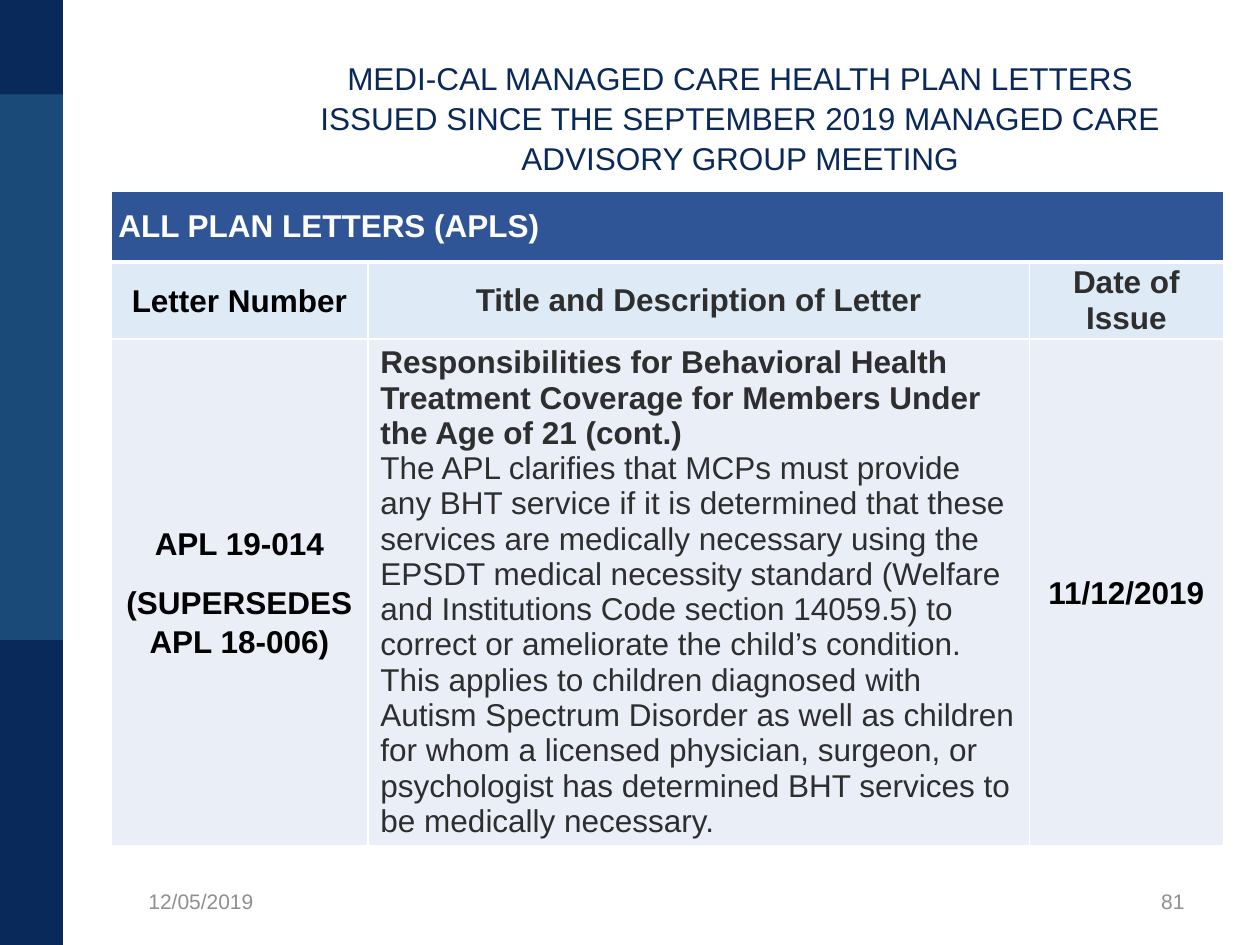
from lxml.etree import SubElement
from pptx import Presentation
from pptx.dml.color import RGBColor
from pptx.enum.shapes import MSO_SHAPE
from pptx.enum.text import MSO_ANCHOR, PP_ALIGN
from pptx.oxml.ns import qn
from pptx.util import Inches, Pt

NAVY, TEAL = "0A295B", "1A4A78"
WHITE, BLACK, CHARCOAL, GRAY = "FFFFFF", "000000", "2E2E2E", "8F8F8F"
BANNER, HEADER, BODY = "2F5597", "DEEBF7", "EAEFF7"
LEFT, CENTER, RIGHT = PP_ALIGN.LEFT, PP_ALIGN.CENTER, PP_ALIGN.RIGHT

DESCRIPTION = (
    "The APL clarifies that MCPs must provide any BHT service if it is determined "
    "that these services are medically necessary using the EPSDT medical necessity "
    "standard (Welfare and Institutions Code section 14059.5) to correct or "
    "ameliorate the child’s condition. This applies to children diagnosed with "
    "Autism Spectrum Disorder as well as children for whom a licensed physician, "
    "surgeon, or psychologist has determined BHT services to be medically necessary."
)


def color(value):
    return RGBColor.from_string(value)


def add_band(page, top, height, fill):
    band = page.shapes.add_shape(
        MSO_SHAPE.RECTANGLE, 0, Inches(top), Inches(0.5), Inches(height))
    band.shadow.inherit = False
    band.fill.solid()
    band.fill.fore_color.rgb = color(fill)
    band.line.fill.background()


def add_span(para, text, size, ink, bold=False):
    span = para.add_run()
    span.text = text
    span.font.name = "Arial"
    span.font.size = Pt(size)
    span.font.bold = bold
    span.font.color.rgb = color(ink)


def add_text(page, left, top, width, height, lines, size, ink, align, spacing=1.0):
    box = page.shapes.add_textbox(
        Inches(left), Inches(top), Inches(width), Inches(height))
    frame = box.text_frame
    frame.word_wrap = True
    frame.vertical_anchor = MSO_ANCHOR.MIDDLE
    para = frame.paragraphs[0]
    para.alignment = align
    para.line_spacing = spacing
    for index, line in enumerate(lines):
        if index:
            para.add_line_break()
        add_span(para, line, size, ink)


def set_borders(cell, **widths):
    properties = cell._tc.get_or_add_tcPr()
    for index, side in enumerate("LRTB"):
        line = SubElement(properties, qn(f"a:ln{side}"), w=str(Pt(widths.get(side, 1))))
        fill = SubElement(line, qn("a:solidFill"))
        SubElement(fill, qn("a:srgbClr"), val=WHITE)
        # Border lines come before the fill in the cell properties
        properties.insert(index, line)


def fill_cell(cell, fill, paragraphs, align=CENTER, spacing=1.0, gap=0, tight=True):
    """Each paragraph is a (text, colour, bold) triple."""
    cell.fill.solid()
    cell.fill.fore_color.rgb = color(fill)
    cell.vertical_anchor = MSO_ANCHOR.MIDDLE
    if tight:
        cell.margin_left = cell.margin_right = Inches(0.06)
        cell.margin_top = cell.margin_bottom = 0
    frame = cell.text_frame
    for index, (text, ink, bold) in enumerate(paragraphs):
        para = frame.add_paragraph() if index else frame.paragraphs[0]
        para.alignment = align
        para.line_spacing = spacing
        if index and gap:
            para.space_before = Pt(gap)
        add_span(para, text, 18, ink, bold)


def add_letters_table(page):
    widths, heights = (2.04, 5.25, 1.54), (0.56, 0.61, 4.02)
    table = page.shapes.add_table(
        len(heights), len(widths), Inches(0.88), Inches(1.52),
        Inches(sum(widths)), Inches(sum(heights))).table
    for column, width in zip(table.columns, widths):
        column.width = Inches(width)
    for row, height in zip(table.rows, heights):
        row.height = Inches(height)

    # Banner across all columns
    table.cell(0, 0).merge(table.cell(0, 2))
    fill_cell(table.cell(0, 0), BANNER, [("ALL PLAN LETTERS (APLS)", WHITE, True)], LEFT)

    # Column headings
    headings = (("Letter Number", BLACK, 1.08),
                ("Title and Description of Letter", CHARCOAL, 1.0),
                ("Date of Issue", CHARCOAL, 1.0))
    for index, (text, ink, spacing) in enumerate(headings):
        fill_cell(table.cell(1, index), HEADER, [(text, ink, True)], spacing=spacing)

    # Letter details
    number, description, date = (table.cell(2, index) for index in range(3))
    fill_cell(number, BODY, [("APL 19-014", BLACK, True),
                             ("(SUPERSEDES APL 18-006)", BLACK, True)],
              spacing=1.08, gap=12, tight=False)
    fill_cell(description, BODY, [
        ("Responsibilities for Behavioral Health Treatment Coverage for Members "
         "Under the Age of 21 (cont.)", CHARCOAL, True),
        (DESCRIPTION, CHARCOAL, False)], LEFT, tight=False)
    fill_cell(date, BODY, [("11/12/2019", BLACK, True)], spacing=1.08, tight=False)

    # White rules, heavier below the banner
    for row in range(len(heights)):
        for column in range(len(widths)):
            set_borders(table.cell(row, column),
                        T=3 if row == 1 else 1, B=3 if row == 0 else 1)


def main():
    deck = Presentation()
    deck.slide_width, deck.slide_height = Inches(10), Inches(7.5)
    page = deck.slides.add_slide(deck.slide_layouts[6])

    # Side stripe
    add_band(page, 0, 7.5, TEAL)
    add_band(page, 0, 0.75, NAVY)
    add_band(page, 5.08, 2.42, NAVY)

    add_letters_table(page)

    # Footer and title
    add_text(page, 1.08, 6.95, 2.33, 0.4, ["12/05/2019"], 12, GRAY, LEFT)
    add_text(page, 7.17, 6.95, 2.33, 0.4, ["81"], 12, GRAY, RIGHT)
    add_text(page, 2, 0.3, 7.75, 1.25,
             ["MEDI-CAL MANAGED CARE HEALTH PLAN LETTERS",
              "ISSUED SINCE THE SEPTEMBER 2019 MANAGED CARE ADVISORY GROUP MEETING"],
             18, NAVY, CENTER, 1.07)

    deck.save("out.pptx")


if __name__ == "__main__":
    main()
